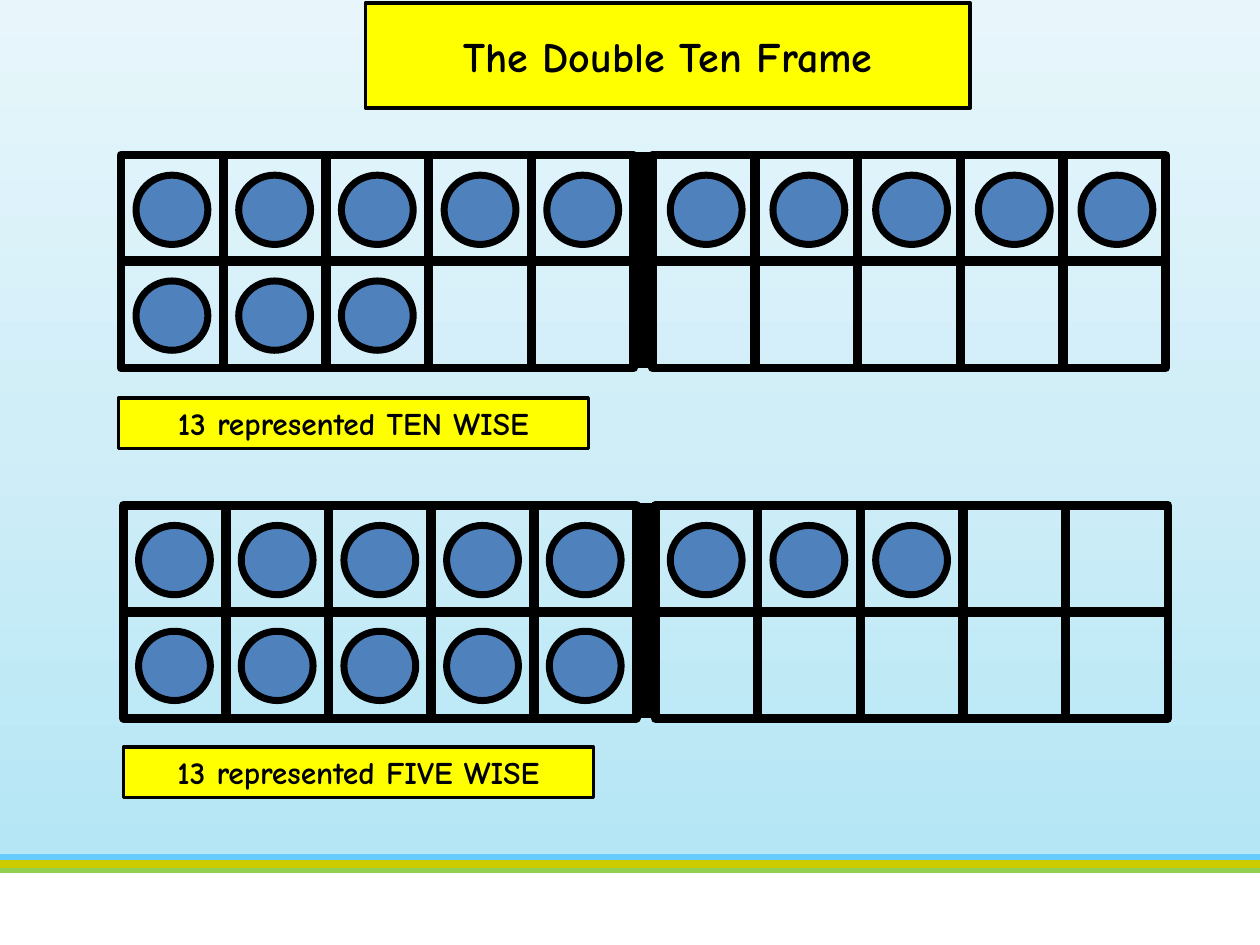
from copy import deepcopy
from dataclasses import dataclass

from lxml.etree import SubElement
from pptx import Presentation
from pptx.dml.color import RGBColor
from pptx.enum.shapes import MSO_CONNECTOR, MSO_SHAPE
from pptx.enum.text import MSO_ANCHOR, MSO_AUTO_SIZE, PP_ALIGN
from pptx.oxml.ns import qn
from pptx.util import Inches, Pt


@dataclass(frozen=True)
class Theme:
    font: str = "Comic Neue"
    title_size: int = 24
    caption_size: int = 18
    ink: str = "000000"
    label_fill: str = "FFFF00"
    counter: str = "4F81BD"
    sky: tuple = ("B5E6F5", "D0EEF8", "E8F6FB")
    green: str = "92D050"
    blue: str = "66CCFF"
    olive: str = "CCCC00"


theme = Theme()


def write_label(label, text, *, size, color=theme.ink, bold=True):
    """Give a label its yellow box and one centred line of text."""
    label.fill.solid()
    label.fill.fore_color.rgb = RGBColor.from_string(theme.label_fill)
    label.line.color.rgb = RGBColor.from_string(theme.ink)
    label.line.width = Pt(2)
    label.shadow.inherit = False
    frame = label.text_frame
    frame.word_wrap = True
    frame.auto_size = MSO_AUTO_SIZE.SHAPE_TO_FIT_TEXT
    frame.vertical_anchor = MSO_ANCHOR.MIDDLE
    paragraph = frame.paragraphs[0]
    paragraph.text = text
    paragraph.alignment = PP_ALIGN.CENTER
    paragraph.space_before = Pt(0)
    paragraph.font.name = theme.font
    paragraph.font.size = Pt(size)
    paragraph.font.bold = bold
    paragraph.font.color.rgb = RGBColor.from_string(color)


def draw_line(shapes, start, end, color, width):
    """Draw a straight line without a shadow."""
    line = shapes.add_connector(MSO_CONNECTOR.STRAIGHT, *start, *end)
    line.line.color.rgb = RGBColor.from_string(color)
    line.line.width = Pt(width)
    SubElement(line.element.spPr, qn("a:effectLst"))


prs = Presentation()
prs.slide_width, prs.slide_height = Inches(10), Inches(7.5)
slide = prs.slides.add_slide(prs.slide_layouts[5])

# Sky, darkest at the bottom
sky = slide.shapes.add_shape(MSO_SHAPE.RECTANGLE, 0, 0, prs.slide_width, Inches(6.81))
sky.shadow.inherit = False
sky.line.fill.background()
sky.fill.gradient()
sky.fill.gradient_angle = 90
stop_list = sky.element.find(".//" + qn("a:gsLst"))
stop_list.insert(1, deepcopy(stop_list[0]))
for stop, position, color in zip(sky.fill.gradient_stops, (0, 0.5, 1), theme.sky):
    stop.position = position
    stop.color.rgb = RGBColor.from_string(color)

# Horizon stripes
for y, color in ((6.9, theme.green), (6.81, theme.blue), (6.86, theme.olive)):
    draw_line(slide.shapes, (0, Inches(y)), (prs.slide_width, Inches(y)), color, 4.5)

# Title, brought in front of the sky
title = slide.shapes.title
title.element.getparent().append(title.element)
title.left, title.top, title.width, title.height = map(Inches, (2.9, 0.19, 4.8, 0.5))
write_label(title, "The Double Ten Frame", size=theme.title_size)

# Captions
for left, top, text in (
    (0.94, 3.16, "13 represented TEN WISE"),
    (0.98, 5.93, "13 represented FIVE WISE"),
):
    caption = slide.shapes.add_shape(
        MSO_SHAPE.RECTANGLE, Inches(left), Inches(top), Inches(3.73), Inches(0.4))
    write_label(caption, text, size=theme.caption_size)

# Double ten frames: top, divider, then per half the cell left, counter left
# and number of counters in each row
double_frames = (
    (1.23, 5.12, ((0.96, 1.08, (5, 3)), (5.18, 5.32, (5, 0)))),
    (4.01, 5.14, ((0.98, 1.1, (5, 5)), (5.2, 5.32, (3, 0)))),
)
columns = 5
column_step = Inches(3.26) // (columns - 1)
row_step = Inches(0.84)

for top, divider_x, halves in double_frames:
    double_frame = slide.shapes.add_group_shape().shapes

    # Empty cells
    for cell_left, _, row_counts in halves:
        for row in range(len(row_counts)):
            for column in range(columns):
                cell = double_frame.add_shape(
                    MSO_SHAPE.RECTANGLE,
                    Inches(cell_left) + column * column_step,
                    Inches(top) + row * row_step,
                    Inches(0.81), Inches(0.85))
                cell.fill.background()
                cell.line.color.rgb = RGBColor.from_string(theme.ink)
                cell.line.width = Pt(5)
                cell.shadow.inherit = False

    # Divider between the two tens
    draw_line(double_frame,
              (Inches(divider_x), Inches(top - 0.02)),
              (Inches(divider_x), Inches(top + 1.69)), theme.ink, 10.25)

    # Counters
    for _, counter_left, row_counts in halves:
        for row, count in enumerate(row_counts):
            for column in range(count):
                counter = double_frame.add_shape(
                    MSO_SHAPE.OVAL,
                    Inches(counter_left) + column * column_step,
                    Inches(top + 0.16) + row * row_step,
                    Inches(0.57), Inches(0.55))
                counter.fill.solid()
                counter.fill.fore_color.rgb = RGBColor.from_string(theme.counter)
                counter.line.color.rgb = RGBColor.from_string(theme.ink)
                counter.line.width = Pt(4)
                counter.shadow.inherit = False

prs.save("out.pptx")
